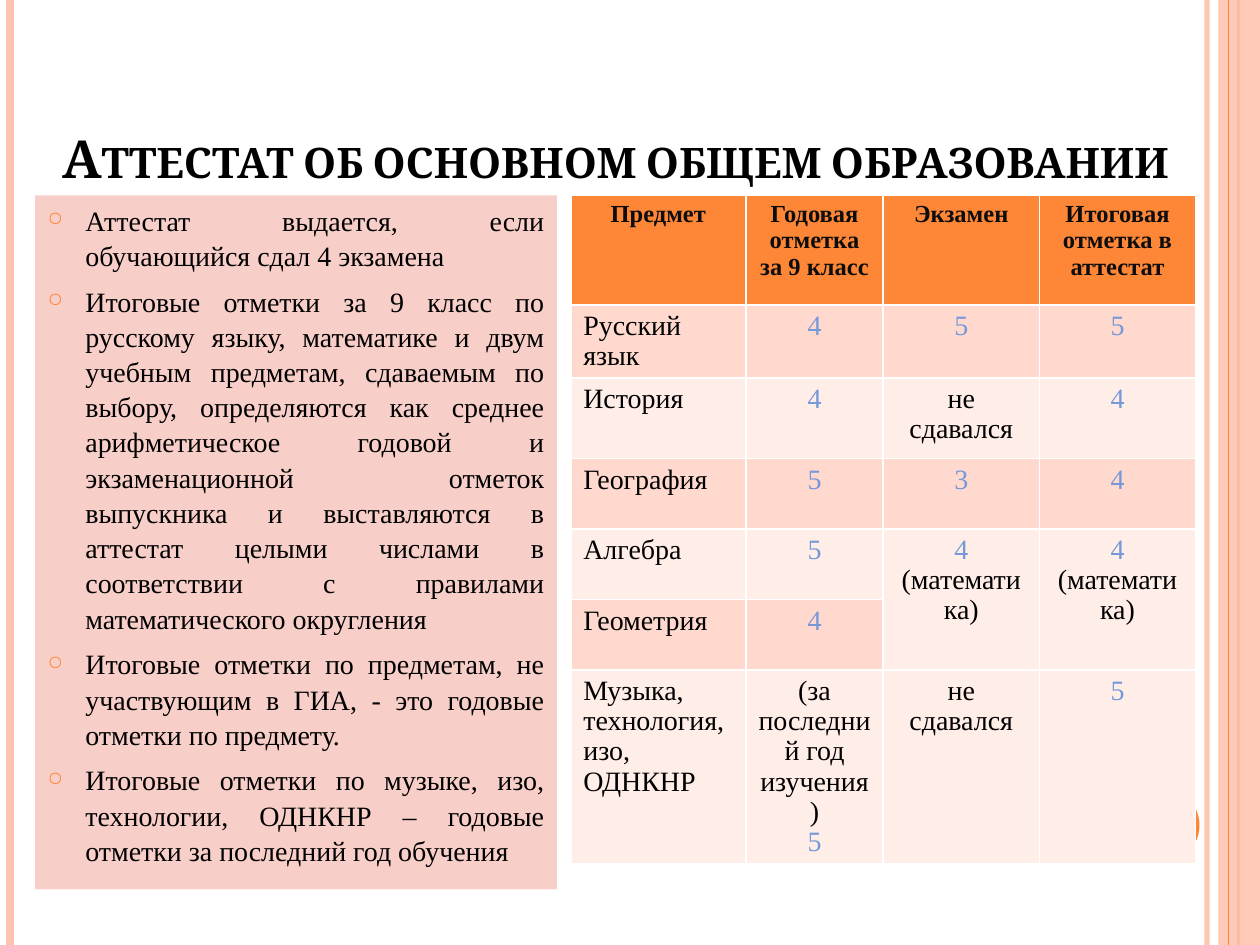
from dataclasses import dataclass

from lxml import etree
from pptx import Presentation, util as u
from pptx.dml.color import RGBColor
from pptx.enum import shapes, text
from pptx.oxml.ns import qn


@dataclass(frozen=True)
class Theme:
    accent: str = "FE8637"
    stripe: str = "FEC3AE"
    panel: str = "F8CFC8"
    bands: tuple = ("FFD9CE", "FFEDE8")
    ink: str = "000000"
    header_ink: str = "0D0D0D"
    mark: str = "7598D9"
    title_font: str = "Cambria"
    font: str = "Times New Roman"
    title_size: int = 30
    size: int = 16
    header_size: int = 14


def sub(parent, tag, **attrs):
    node = etree.SubElement(parent, qn(tag))
    for name, value in attrs.items():
        node.set(name, str(value))
    return node


def add_text(p, content, size, font, color, bold=False, small_caps=False):
    r = p.add_run()
    r.text = content
    r.font.size, r.font.name, r.font.bold = u.Pt(size), font, bold
    r.font.color.rgb = RGBColor.from_string(color)
    if small_caps:
        r.font._element.set("cap", "small")


def fade(fill, percent):
    color = next(fill.iter(qn("a:srgbClr")))
    sub(color, "a:alpha", val=percent * 1000)


class Slide:
    """Style and current slide, with a method for each kind of element."""

    def __init__(self, prs, theme):
        self.theme = theme
        self.s = prs.slides.add_slide(prs.slide_layouts[5])

    def title(self, content, box):
        t, sp = self.theme, self.s.shapes.title
        sp.left, sp.top, sp.width, sp.height = map(u.Inches, box)
        tf = sp.text_frame
        tf.word_wrap = True
        tf.vertical_anchor = text.MSO_ANCHOR.BOTTOM
        p = tf.paragraphs[0]
        p.alignment = text.PP_ALIGN.CENTER
        add_text(p, content, t.title_size, t.title_font, t.ink, bold=True, small_caps=True)

    def vline(self, x, color, width, alpha=None):
        x = u.Inches(x)
        sp = self.s.shapes.add_connector(shapes.MSO_CONNECTOR.STRAIGHT, x, 0, x, u.Inches(7.5))
        sp.line.width = u.Pt(width)
        sp.line.color.rgb = RGBColor.from_string(color)
        props = sp._element.spPr
        if alpha:
            fade(props, alpha)
        sub(props, "a:effectLst")

    def shape(self, kind, box, color, alpha=None):
        sp = self.s.shapes.add_shape(kind, *map(u.Inches, box))
        sp.shadow.inherit = False
        sp.fill.solid()
        sp.fill.fore_color.rgb = RGBColor.from_string(color)
        sp.line.fill.background()
        if alpha:
            fade(sp._element.spPr, alpha)
        return sp

    def bullets(self, items, box):
        t = self.theme
        tf = self.shape(shapes.MSO_SHAPE.RECTANGLE, box, t.panel).text_frame
        tf.word_wrap = True
        tf.vertical_anchor = text.MSO_ANCHOR.TOP
        for i, item in enumerate(items):
            p = tf.add_paragraph() if i else tf.paragraphs[0]
            p.alignment = text.PP_ALIGN.JUSTIFY
            p.space_before, p.line_spacing = u.Pt(6), 1.05
            props = p._p.get_or_add_pPr()
            props.set("marL", str(u.Inches(0.3)))
            props.set("indent", str(-u.Inches(0.3)))
            sub(sub(props, "a:buClr"), "a:srgbClr", val=t.accent)
            sub(props, "a:buSzPct", val=70000)
            sub(props, "a:buChar", char="○")
            add_text(p, item, t.size, t.font, t.ink)

    def cell(self, cell, content, fill, align, header):
        t = self.theme
        cell.fill.solid()
        cell.fill.fore_color.rgb = RGBColor.from_string(fill)
        tf = cell.text_frame
        for i, line in enumerate(content.split("\n")):
            p = tf.add_paragraph() if i else tf.paragraphs[0]
            p.alignment, p.line_spacing = align, 0.97
            if header:
                add_text(p, line, t.header_size, t.font, t.header_ink, bold=True)
                continue
            mark = line[:1] if line[:1].isdigit() else ""
            for part, color in ((mark, t.mark), (line[len(mark):], t.ink)):
                if part:
                    add_text(p, part, t.size, t.font, color)

    def table(self, rows, left, top, widths, heights, merges):
        t = self.theme
        tbl = self.s.shapes.add_table(
            len(rows), len(widths), u.Inches(left), u.Inches(top),
            u.Inches(sum(widths)), u.Inches(sum(heights))).table
        for col, width in zip(tbl.columns, widths):
            col.width = u.Inches(width)
        for row, height in zip(tbl.rows, heights):
            row.height = u.Inches(height)
        for first, last in merges:
            tbl.cell(*first).merge(tbl.cell(*last))
        for i, row in enumerate(rows):
            fill = t.bands[(i - 1) % 2] if i else t.accent
            for j, content in enumerate(row):
                if content is not None:
                    centred = i == 0 or j > 0
                    align = text.PP_ALIGN.CENTER if centred else text.PP_ALIGN.LEFT
                    self.cell(tbl.cell(i, j), content, fill, align, header=i == 0)


RULES = [
    "Аттестат выдается, если обучающийся сдал 4 экзамена",
    "Итоговые отметки за 9 класс по русскому языку, математике и двум учебным предметам, "
    "сдаваемым по выбору, определяются как среднее арифметическое годовой и экзаменационной "
    "отметок выпускника и выставляются в аттестат целыми числами в соответствии с правилами "
    "математического округления",
    "Итоговые отметки по предметам, не участвующим в ГИА, - это годовые отметки по предмету.",
    "Итоговые отметки по музыке, изо, технологии, ОДНКНР – годовые отметки за последний "
    "год обучения",
]

MARKS = [
    ("Предмет", "Годовая отметка за 9 класс", "Экзамен", "Итоговая отметка в аттестат"),
    ("Русский язык", "4", "5", "5"),
    ("История", "4", "не сдавался", "4"),
    ("География", "5", "3", "4"),
    ("Алгебра", "5", "4 (математика)", "4 (математика)"),
    ("Геометрия", "4", None, None),
    ("Музыка, технология, изо, ОДНКНР", "(за последний год изучения)\n5", "не сдавался", "5"),
]


def main():
    prs = Presentation()
    prs.slide_width, prs.slide_height = u.Inches(10), u.Inches(7.5)
    theme = Theme()
    slide = Slide(prs, theme)
    slide.vline(9.58, theme.stripe, 3, alpha=93)
    slide.vline(0.08, theme.stripe, 4.5)
    slide.vline(9.83, theme.accent, 1.5)
    slide.shape(shapes.MSO_SHAPE.RECTANGLE, (9.67, 0, 0.33, 7.5), theme.stripe, alpha=87)
    slide.vline(9.75, theme.accent, 0.75)
    slide.shape(shapes.MSO_SHAPE.OVAL, (8.92, 6.25, 0.6, 0.6), theme.accent)
    slide.title("Аттестат об основном общем образовании", (0.28, 0.3, 9.21, 1.25))
    slide.bullets(RULES, (0.28, 1.55, 4.14, 5.51))
    slide.table(MARKS, 4.53, 1.55, (1.39, 1.09, 1.24, 1.24),
                (0.87, 0.58, 0.64, 0.56, 0.56, 0.56, 1.28),
                [((4, j), (5, j)) for j in (2, 3)])
    prs.save("out.pptx")


if __name__ == "__main__":
    main()
